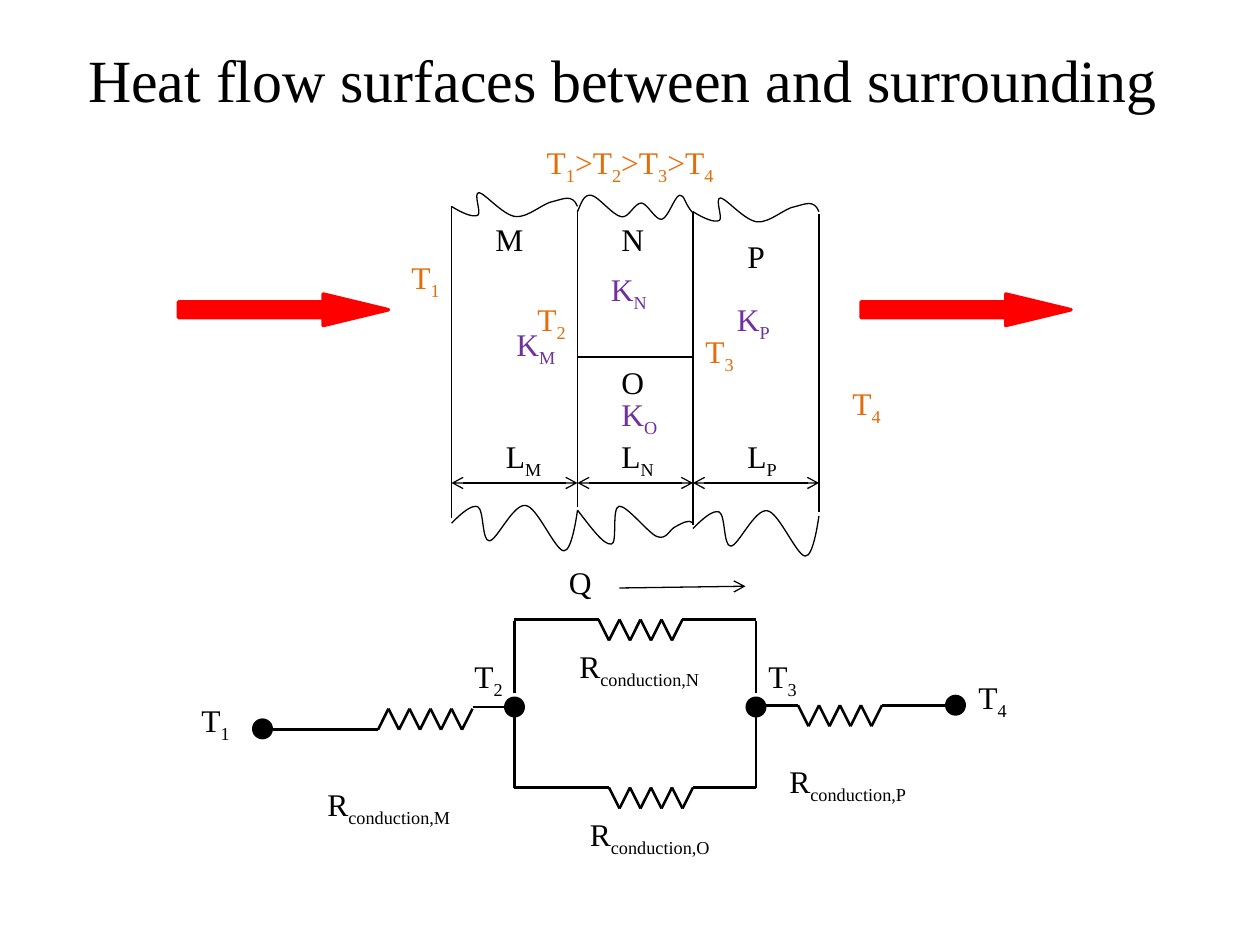
import itertools

import lxml.etree
import pptx
import pptx.dml.color
import pptx.enum.shapes
import pptx.enum.text
import pptx.oxml.ns
import pptx.util

Pt = pptx.util.Pt
qn = pptx.oxml.ns.qn
Shape = pptx.enum.shapes.MSO_SHAPE
Align = pptx.enum.text.PP_ALIGN
AutoSize = pptx.enum.text.MSO_AUTO_SIZE

COLOURS = {"ink": "000000", "temperature": "E46C0A", "conductivity": "7030A0", "heat": "FF0000"}
FONT = "Times New Roman"

# Wall faces between the layers M, N/O and P
FACES = [258, 330, 396, 468]
LAYER_SPANS = list(itertools.pairwise(FACES))
FACE_LINES = [(258, 118, 296), (330, 120, 290), (396, 121.5, 300), (396, 121, 299), (468, 122.5, 292.5)]
DIMENSION_Y = 276
DIVIDER_Y = 204

# Bezier control points of the broken edges, measured from the start of each edge
WIDE_TOP = [(5.8, 3.6), (12.2, 6.5), (15.1, 5), (17.3, 3.6), (12.2, -7.9), (15.8, -7.9),
            (19.4, -7.2), (29.5, 5), (36.7, 5.8), (43.9, 6.5), (52.6, -2.2), (58.3, -2.9),
            (64.1, -4.3), (69.1, -7.2), (72, 0)]
WIDE_BOTTOM = [(5.8, -5.8), (11.5, -10.8), (15.1, -9.4), (18.7, -7.2), (17.3, 10.1), (21.6, 10.1),
               (25.9, 10.1), (35.3, -11.5), (42.5, -10.1), (49, -9.4), (59, 15.1), (64.1, 15.8),
               (69.1, 16.6), (72, -7.9), (72, -7.2)]
NARROW_TOP = [(2.2, -5), (3.6, -10.1), (7.9, -9.4), (12.2, -8.6), (20.2, 2.2), (25.2, 2.9),
              (29.5, 3.6), (32.4, -5), (36.7, -5), (40.3, -4.3), (44.6, 5), (48.2, 4.3),
              (51.8, 3.6), (55.4, -8.6), (58.3, -9.4), (61.2, -10.1), (61.2, -4.3), (66, 0.7)]
NARROW_BOTTOM = [(7.9, 10.1), (15.1, 20.2), (19.4, 19.4), (23, 19.4), (19.4, -1.4), (23.8, -2.2),
                 (28.1, -2.9), (40.3, 13), (45.4, 15.1), (51.1, 17.3), (52.6, 10.8), (56.2, 9.4),
                 (59, 7.9), (63.4, 5), (66, 7.2)]
EDGES = [(258, 118, WIDE_TOP), (330, 121, NARROW_TOP), (396, 121, WIDE_TOP),
         (258, 299, WIDE_BOTTOM), (330, 291.5, NARROW_BOTTOM), (396, 302, WIDE_BOTTOM)]

# Labels by colour and width: text with subscripts between bars, left, top
LABELS = {
    ("ink", 48): [("M", 276, 122), ("N", 348, 122), ("O", 348, 204), ("P", 420, 132),
                  ("L|M", 282, 246), ("L|N", 348, 246), ("L|P", 420, 246)],
    ("conductivity", 48): [("K|M", 288, 182), ("K|N", 342, 151), ("K|O", 348, 222), ("K|P", 414, 168)],
    ("temperature", 48): [("T|1", 228, 144), ("T|2", 300, 168), ("T|3", 396, 186), ("T|4", 480, 216)],
    ("ink", 54): [("Q", 318, 318), ("T|1", 108, 397), ("T|2", 264, 372), ("T|3", 432, 372),
                  ("T|4", 552, 384)],
    ("ink", 102): [("R|conduction,M", 180, 445), ("R|conduction,N", 324, 366),
                   ("R|conduction,O", 330, 462), ("R|conduction,P", 444, 432)],
}

# Zigzags: left, top, number of strokes, whether the first stroke rises
ZIGZAGS = [(216, 405, 9, True), (342, 354, 8, False), (348, 450, 8, False), (456, 403, 8, False)]
LEADS = [(156, 216, 417), (270, 288, 404), (294, 342, 354), (390, 432, 354),
         (294, 348, 450), (396, 432, 450), (438, 456, 403), (504, 546, 403)]
BRANCH_XS = [294, 432]
BRANCH_SPANS = [(396, 355), (450, 409)]
NODES = [(144, 410.5), (288, 398), (426, 398), (540, 397)]


def colour(name):
    return pptx.dml.color.RGBColor.from_string(COLOURS[name])


def apply_format(target, values):
    for name, value in values.items():
        setattr(target, name, value)


def write(para, text, name, size):
    """Fill a paragraph; every second part between bars is a subscript."""
    for index, part in enumerate(text.split("|")):
        span = para.add_run()
        span.text = part
        apply_format(span.font, {"name": FONT, "size": Pt(size)})
        span.font.color.rgb = colour(name)
        if index % 2:
            span.font._element.set("baseline", "-25000")


def add_label(page, text, left, top, width, name, align=Align.LEFT):
    box = page.shapes.add_textbox(Pt(left), Pt(top), Pt(width), Pt(29))
    apply_format(box.text_frame, {"word_wrap": True, "auto_size": AutoSize.SHAPE_TO_FIT_TEXT})
    para = box.text_frame.paragraphs[0]
    para.alignment = align
    write(para, text, name, 18)


def add_line(page, start, end, width=0.75, arrows=()):
    """Draw a straight line; arrows lists the ends, headEnd or tailEnd, that get a tip."""
    line = page.shapes.add_connector(
        pptx.enum.shapes.MSO_CONNECTOR.STRAIGHT, *(Pt(value) for value in (*start, *end)))
    line.line.width = Pt(width)
    line.line.color.rgb = colour("ink")
    for tip in arrows:
        lxml.etree.SubElement(line.line._ln, qn(f"a:{tip}"), type="arrow")
    lxml.etree.SubElement(line._element.spPr, qn("a:effectLst"))


def add_curve(page, left, top, offsets):
    builder = page.shapes.build_freeform(Pt(left), Pt(top))
    builder.add_line_segments([(Pt(left + x), Pt(top + y)) for x, y in offsets], close=False)
    curve = builder.convert_to_shape()
    curve.shadow.inherit = False
    curve.fill.background()
    curve.line.width = Pt(0.75)
    curve.line.color.rgb = colour("ink")
    outline = curve._element.find(".//" + qn("a:path"))
    segments = outline.findall(qn("a:lnTo"))
    for first in range(0, len(segments), 3):
        bezier = lxml.etree.SubElement(outline, qn("a:cubicBezTo"))
        for segment in segments[first:first + 3]:
            bezier.append(segment[0])
            outline.remove(segment)


def add_solid(page, kind, left, top, width, height, name):
    solid = page.shapes.add_shape(kind, Pt(left), Pt(top), Pt(width), Pt(height))
    solid.shadow.inherit = False
    solid.fill.solid()
    solid.fill.fore_color.rgb = colour(name)
    solid.line.fill.background()
    return solid


def add_heat_arrow(page, left):
    arrow = add_solid(page, Shape.RIGHT_ARROW, left, 168, 120, 18, "heat")
    arrow.adjustments[0] = 0.5
    arrow.adjustments[1] = 2.07
    arrow.line.color.rgb = colour("heat")
    arrow.line.width = Pt(2)


def add_zigzag(page, left, top, strokes, rising):
    points = [(left + 6 * step, top + 12 * ((step + rising) % 2)) for step in range(strokes + 1)]
    for start, end in itertools.pairwise(points):
        add_line(page, start, end, 1.5)


def add_title(page, text):
    title = page.shapes.title
    apply_format(title, {"left": Pt(36), "top": Pt(0), "width": Pt(648), "height": Pt(90)})
    apply_format(title.text_frame, {"auto_size": AutoSize.NONE, "word_wrap": True,
                                    "vertical_anchor": pptx.enum.text.MSO_ANCHOR.MIDDLE})
    para = title.text_frame.paragraphs[0]
    para.alignment = Align.CENTER
    write(para, text, "ink", 34.2)


def add_wall(page):
    for x, top, bottom in FACE_LINES:
        add_line(page, (x, top), (x, bottom))
    for edge in EDGES:
        add_curve(page, *edge)
    add_line(page, (FACES[1], DIVIDER_Y), (FACES[2], DIVIDER_Y))
    for left, right in LAYER_SPANS:
        add_line(page, (left, DIMENSION_Y), (right, DIMENSION_Y), arrows=("headEnd", "tailEnd"))
    for left in (102, 492):
        add_heat_arrow(page, left)


def add_circuit(page):
    add_line(page, (354, 336), (426, 335), arrows=("tailEnd",))
    for zigzag in ZIGZAGS:
        add_zigzag(page, *zigzag)
    for left, right, y in LEADS:
        add_line(page, (left, y), (right, y), 1.5)
    for x, (start, end) in itertools.product(BRANCH_XS, BRANCH_SPANS):
        add_line(page, (x, start), (x, end), 1.25)
    for left, top in NODES:
        add_solid(page, Shape.OVAL, left, top, 12, 12, "ink")


def main():
    deck = pptx.Presentation()
    apply_format(deck, {"slide_width": Pt(720), "slide_height": Pt(540)})
    page = deck.slides.add_slide(deck.slide_layouts[5])
    add_title(page, "Heat flow surfaces between and surrounding ")
    add_wall(page)
    add_circuit(page)
    add_label(page, "T|1|>T|2|>T|3|>T|4", 276, 78, 168, "temperature", Align.CENTER)
    for (name, width), labels in LABELS.items():
        for text, left, top in labels:
            add_label(page, text, left, top, width, name)
    deck.save("out.pptx")


if __name__ == "__main__":
    main()
